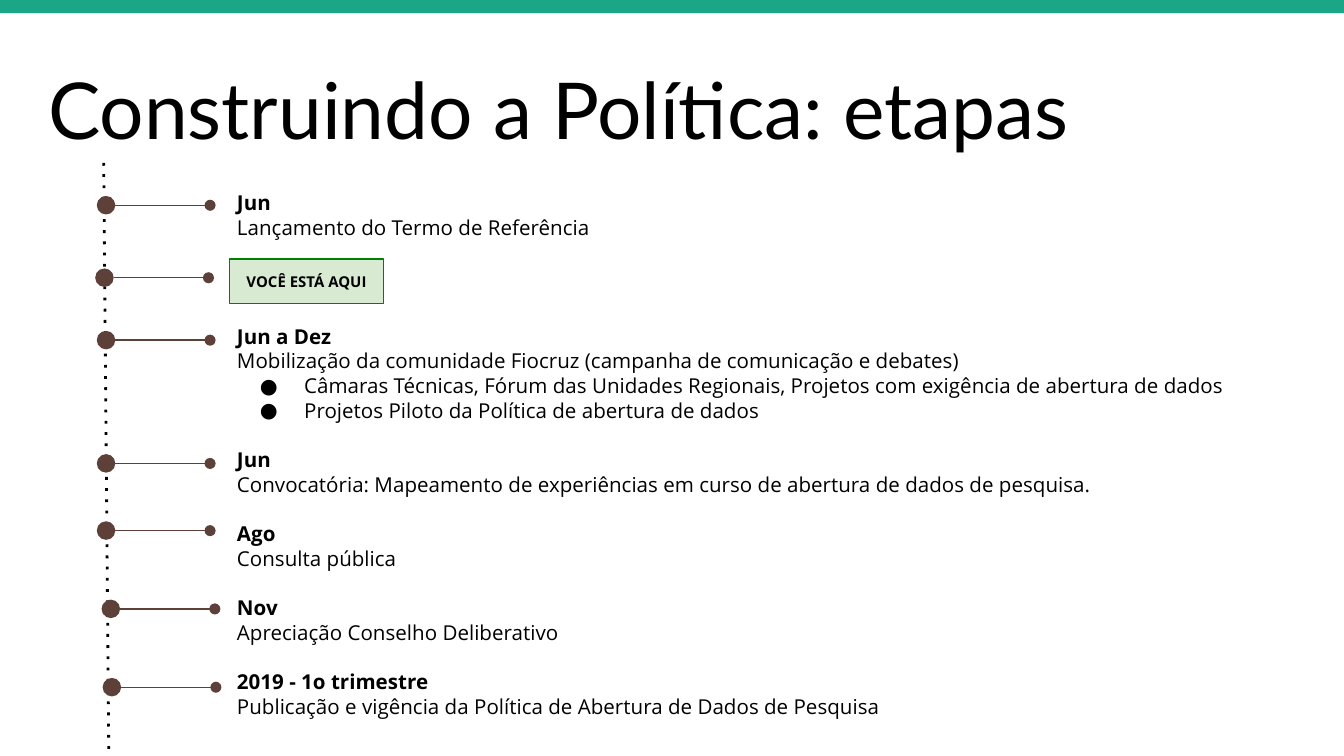
import pptx
import pptx.dml.color
import pptx.enum.shapes
import pptx.enum.text
import pptx.oxml
import pptx.oxml.ns
import pptx.util
from pptx.util import Cm, Pt

BLACK = "000000"
BROWN = "5D4037"
GREEN = "1CA688"
BODY_FONT = "Open Sans"
INSET = Cm(0.25)
DOT_SIZE = 0.35
BRANCH_LENGTH = 1.79

# (left of the dot, height of its centre) in centimetres
MILESTONES = [
    (1.83, 3.88), (1.8, 5.25), (1.83, 6.43), (1.83, 8.76),
    (1.83, 10.03), (1.92, 11.51), (1.94, 12.99),
]

# (space before in points, heading, description, bullets)
STAGES = [
    (0, "Jun", "Lançamento do Termo de Referência", []),
    (45, "Jun a Dez",
     "Mobilização da comunidade Fiocruz (campanha de comunicação e debates)",
     ["Câmaras Técnicas, Fórum das Unidades Regionais, "
      "Projetos com exigência de abertura de dados",
      "Projetos Piloto da Política de abertura de dados"]),
    (13.2, "Jun",
     "Convocatória: Mapeamento de experiências em curso "
     "de abertura de dados de pesquisa.", []),
    (13.2, "Ago", "Consulta pública", []),
    (13.2, "Nov", "Apreciação Conselho Deliberativo", []),
    (13.2, "2019 - 1o trimestre",
     "Publicação e vigência da Política de Abertura de Dados de Pesquisa", []),
]


def color(hex_string):
    return pptx.dml.color.RGBColor.from_string(hex_string)


def add_xml(parent, tag, **attributes):
    element = pptx.oxml.parse_xml(f"<{tag} {pptx.oxml.ns.nsdecls('a')}/>")
    for name, value in attributes.items():
        element.set(name, value)
    parent.append(element)


def format_font(font, name, size, bold=False):
    font.name = name
    font.size = Pt(size)
    font.bold = bold
    font.color.rgb = color(BLACK)


def set_insets(text_frame):
    text_frame.margin_left = text_frame.margin_right = INSET
    text_frame.margin_top = text_frame.margin_bottom = INSET


def add_filled_shape(shapes, kind, left, top, width, height, fill):
    shape = shapes.add_shape(kind, Cm(left), Cm(top), Cm(width), Cm(height))
    shape.shadow.inherit = False
    shape.fill.solid()
    shape.fill.fore_color.rgb = color(fill)
    shape.line.fill.background()
    return shape


def add_line(shapes, start, end, line_color, width):
    line = shapes.add_connector(
        pptx.enum.shapes.MSO_CONNECTOR.STRAIGHT,
        Cm(start[0]), Cm(start[1]), Cm(end[0]), Cm(end[1]))
    line.line.color.rgb = color(line_color)
    line.line.width = Pt(width)
    add_xml(line._element.spPr, "a:effectLst")
    return line


def add_title(slide, text):
    title = slide.shapes.title
    title.left, title.top = Cm(0.66), Cm(0.88)
    title.width, title.height = Cm(23.67), Cm(2.31)
    frame = title.text_frame
    frame.text = text
    frame.auto_size = pptx.enum.text.MSO_AUTO_SIZE.NONE
    frame.vertical_anchor = pptx.enum.text.MSO_ANCHOR.BOTTOM
    set_insets(frame)
    paragraph = frame.paragraphs[0]
    paragraph.alignment = pptx.enum.text.PP_ALIGN.LEFT
    format_font(paragraph.runs[0].font, "Lato", 42)


def add_milestone(slide, left, center):
    """Add a dot with a branch that ends in a small dot."""
    group = slide.shapes.add_group_shape()
    add_filled_shape(
        group.shapes, pptx.enum.shapes.MSO_SHAPE.OVAL,
        left, center - DOT_SIZE / 2, DOT_SIZE, DOT_SIZE, BROWN)
    start = left + DOT_SIZE
    branch = add_line(
        group.shapes, (start, center), (start + BRANCH_LENGTH, center), BROWN, 0.75)
    add_xml(branch.line._get_or_add_ln(), "a:tailEnd", type="oval")


def add_stages(slide):
    box = slide.shapes.add_textbox(Cm(4.23), Cm(3.35), Cm(19.66), Cm(9.32))
    frame = box.text_frame
    frame.word_wrap = True
    set_insets(frame)

    def add_line_of_text(text, space_before=0, bold=False, bullet=False):
        paragraph = frame.paragraphs[0]
        if paragraph.runs:
            paragraph = frame.add_paragraph()
        paragraph.text = text
        paragraph.line_spacing = 1.0
        paragraph.space_before = Pt(space_before)
        if bullet:
            properties = paragraph._p.get_or_add_pPr()
            properties.set("marL", str(Cm(1.27)))
            properties.set("indent", str(-Cm(0.84)))
            add_xml(properties, "a:buFont", typeface=BODY_FONT)
            add_xml(properties, "a:buChar", char="●")
        format_font(paragraph.runs[0].font, BODY_FONT, 11, bold)

    for space_before, heading, description, bullets in STAGES:
        add_line_of_text(heading, space_before, bold=True)
        add_line_of_text(description)
        for text in bullets:
            add_line_of_text(text, bullet=True)


def add_here_label(slide):
    label = add_filled_shape(
        slide.shapes, pptx.enum.shapes.MSO_SHAPE.RECTANGLE,
        4.34, 4.9, 2.91, 0.84, "D9EAD3")
    label.line.color.rgb = color("008000")
    label.line.width = Pt(0.75)
    frame = label.text_frame
    frame.text = "VOCÊ ESTÁ AQUI"
    frame.vertical_anchor = pptx.enum.text.MSO_ANCHOR.MIDDLE
    set_insets(frame)
    paragraph = frame.paragraphs[0]
    paragraph.alignment = pptx.enum.text.PP_ALIGN.CENTER
    format_font(paragraph.runs[0].font, BODY_FONT, 8, bold=True)


def main():
    presentation = pptx.Presentation()
    presentation.slide_width = Cm(25.4)
    presentation.slide_height = Cm(14.29)
    slide = presentation.slides.add_slide(presentation.slide_layouts[5])

    add_title(slide, "Construindo a Política: etapas")
    add_filled_shape(
        slide.shapes, pptx.enum.shapes.MSO_SHAPE.RECTANGLE, 0, 0, 25.45, 0.25, GREEN)
    add_stages(slide)
    timeline = add_line(slide.shapes, (1.96, 3.08), (2.06, 14.73), BLACK, 1.5)
    add_xml(timeline.line._get_or_add_ln(), "a:prstDash", val="dot")
    for left, center in MILESTONES:
        add_milestone(slide, left, center)
    add_here_label(slide)

    presentation.save("out.pptx")


if __name__ == "__main__":
    main()
